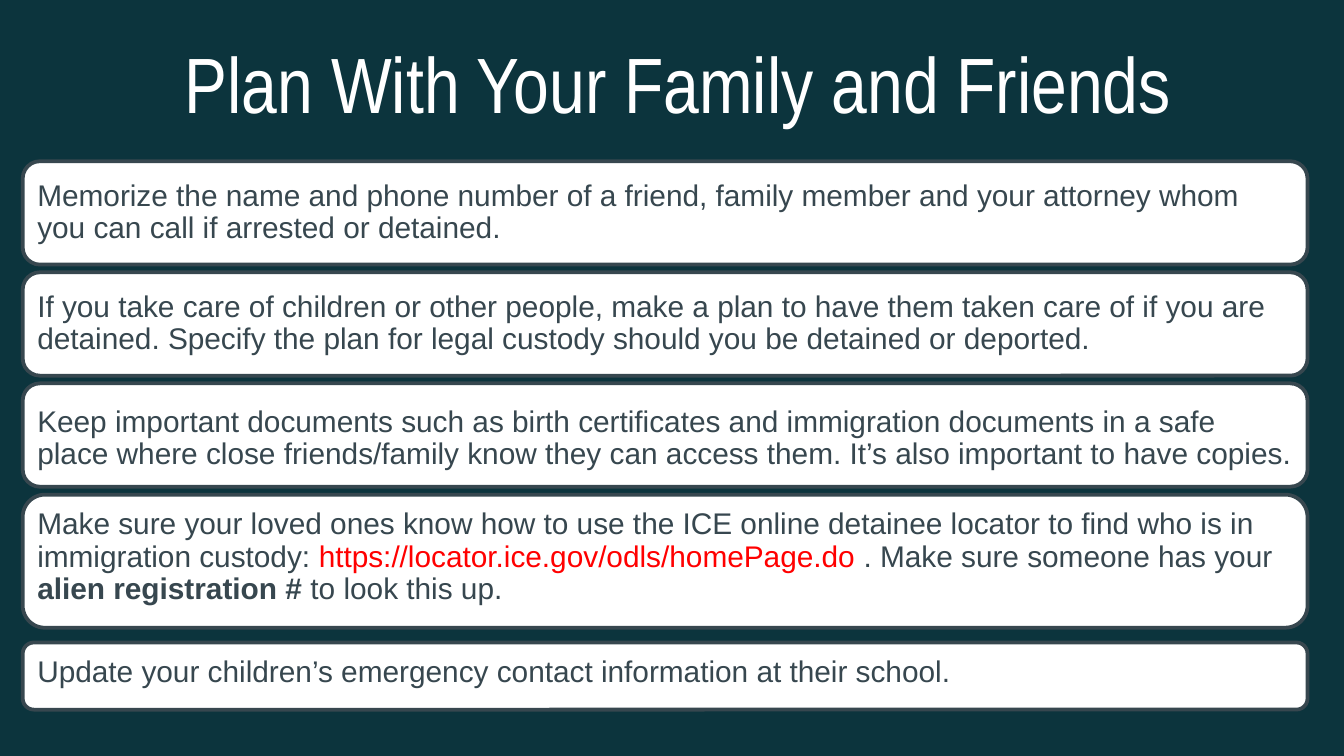
"""Build the slide about planning with family and friends."""
from pptx import Presentation
from pptx.dml.color import RGBColor
from pptx.enum.shapes import MSO_SHAPE
from pptx.enum.text import MSO_ANCHOR, MSO_AUTO_SIZE, PP_ALIGN
from pptx.util import Pt

TEAL = RGBColor(0x0C, 0x34, 0x3D)
SLATE = RGBColor(0x37, 0x47, 0x4F)
WHITE = RGBColor(0xFF, 0xFF, 0xFF)
RED = RGBColor(0xFF, 0x00, 0x00)

TITLE = "Plan With Your Family and Friends"
CARDS = [
    {"top": 86.4, "height": 55.4, "shift": 0, "runs": [
        ("Memorize the name and phone number of a friend, family member and your "
         "attorney whom you can call if arrested or detained.", "plain")]},
    {"top": 145.9, "height": 55.4, "shift": 0, "runs": [
        ("If you take care of children or other people, make a plan to have them "
         "taken care of if you are detained. Specify the plan for legal custody "
         "should you be detained or deported.", "plain")]},
    {"top": 205.4, "height": 55.4, "shift": 2, "runs": [
        ("Keep important documents such as birth certificates and immigration "
         "documents in a safe place where close friends/family know they can "
         "access them. It’s also important to have copies.", "plain")]},
    {"top": 265, "height": 71.3, "shift": -2, "runs": [
        ("Make sure your loved ones know how to use the ICE online detainee "
         "locator to find who is in immigration custody: ", "plain"),
        ("https://locator.ice.gov/odls/homePage.do", "link"),
        (" . Make sure someone has your ", "plain"),
        ("alien registration # ", "bold"),
        ("to look this up.", "plain")]},
    {"top": 344.2, "height": 36, "shift": -1.5, "runs": [
        ("Update your children’s emergency contact information at their school.",
         "plain")]},
]
CARD_LEFT, CARD_WIDTH = 12.2, 688.3
CORNER = 0.167
CORNER_INSET = 0.29
TEXT_MARGIN = 7.8
PADDING = 5


def add_title(slide):
    sp = slide.shapes.title
    sp.left, sp.top, sp.width, sp.height = Pt(60.5), Pt(11.5), Pt(605.5), Pt(61.2)
    tf = sp.text_frame
    tf.text = TITLE
    tf.auto_size = MSO_AUTO_SIZE.NONE
    tf.vertical_anchor = MSO_ANCHOR.TOP
    tf.margin_left = tf.margin_right = tf.margin_top = tf.margin_bottom = Pt(7.2)
    p = tf.paragraphs[0]
    p.alignment = PP_ALIGN.CENTER
    p.font.name, p.font.size = "Arial Narrow", Pt(42)
    p.font.color.rgb = WHITE


def add_card(slide, top, height, shift, runs):
    sp = slide.shapes.add_shape(MSO_SHAPE.ROUNDED_RECTANGLE, Pt(CARD_LEFT), Pt(top),
                                Pt(CARD_WIDTH), Pt(height))
    sp.adjustments[0] = CORNER
    sp.shadow.inherit = False
    sp.fill.solid()
    sp.fill.fore_color.rgb = WHITE
    sp.line.color.rgb = SLATE
    sp.line.width = Pt(2)
    tf = sp.text_frame
    tf.word_wrap = True
    tf.vertical_anchor = MSO_ANCHOR.MIDDLE
    tf.margin_left = tf.margin_right = Pt(TEXT_MARGIN - CORNER * height * CORNER_INSET)
    tf.margin_top, tf.margin_bottom = Pt(PADDING + shift), Pt(PADDING - shift)
    p = tf.paragraphs[0]
    p.alignment = PP_ALIGN.LEFT
    p.line_spacing = 0.9
    p.font.name, p.font.size = "Arial", Pt(16)
    p.font.color.rgb = SLATE
    for text, style in runs:
        r = p.add_run()
        r.text = text
        if style == "link":
            r.font.color.rgb = RED
        elif style == "bold":
            r.font.bold = True


def main():
    prs = Presentation()
    prs.slide_width, prs.slide_height = Pt(720), Pt(405)
    slide = prs.slides.add_slide(prs.slide_layouts[5])
    slide.background.fill.solid()
    slide.background.fill.fore_color.rgb = TEAL
    add_title(slide)
    for card in CARDS:
        add_card(slide, **card)
    prs.save("out.pptx")


if __name__ == "__main__":
    main()
